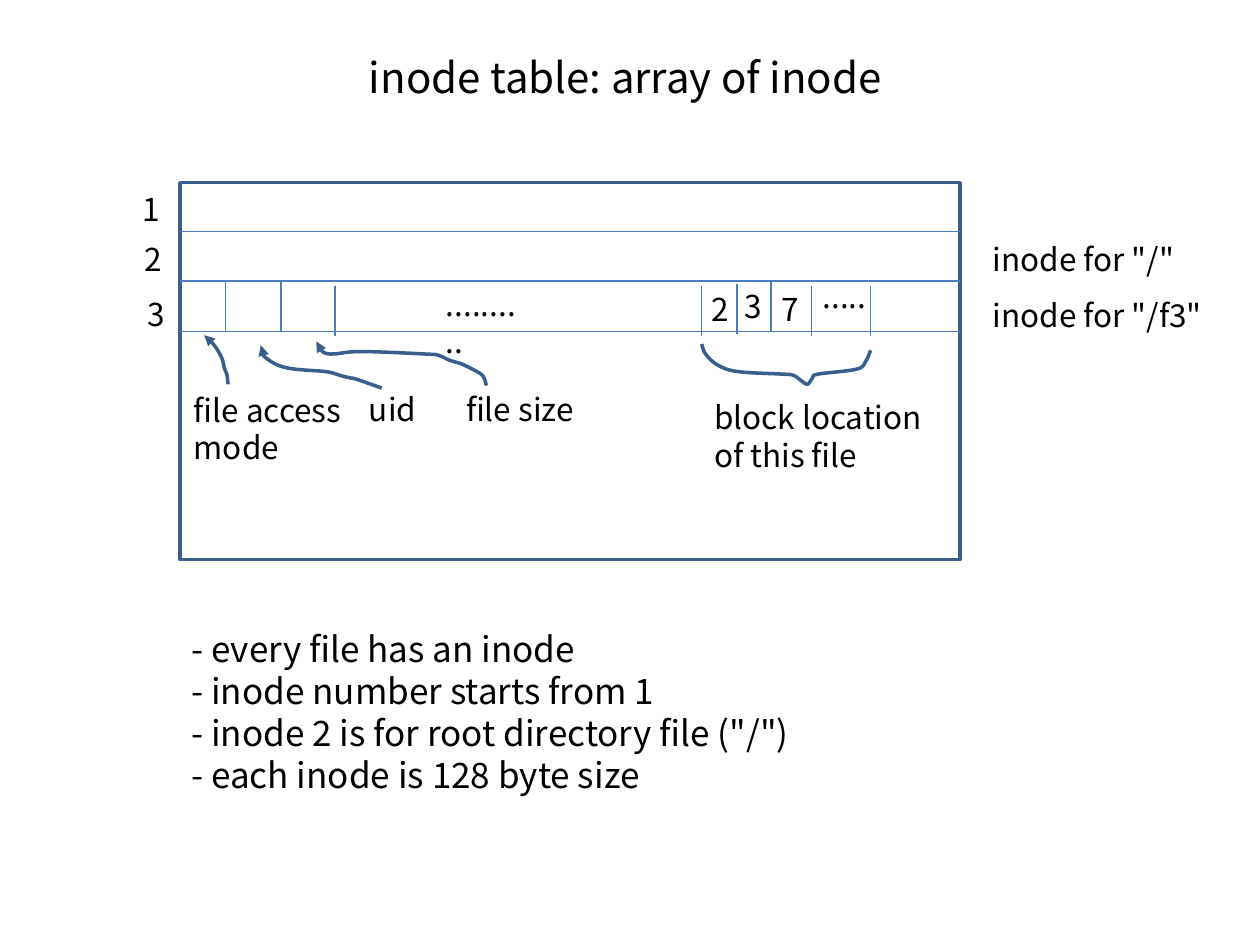
from dataclasses import dataclass

from pptx import Presentation
from pptx import util as u
from pptx.dml.color import RGBColor
from pptx.enum import shapes, text
from pptx.oxml.ns import qn
from lxml import etree

Inches, Pt = u.Inches, u.Pt


@dataclass(frozen=True)
class Theme:
    font: str = "Noto Sans CJK KR"
    ink: RGBColor = RGBColor(0x00, 0x00, 0x00)
    outline: RGBColor = RGBColor(0x3A, 0x5F, 0x8C)
    rule: RGBColor = RGBColor(0x4B, 0x7E, 0xBC)
    title: int = 24
    label: int = 18
    note: int = 20
    thick: float = 2
    thin: float = 0.75


THEME = Theme()
TABLE_LEFT, TABLE_TOP, TABLE_WIDTH, TABLE_HEIGHT = 1.43, 1.45, 6.19, 2.99
ROW_LINES = (1.84, 2.23, 2.63)
FIELD_LINES = (
    (1.79, 2.23), (2.23, 2.23), (2.66, 2.27), (5.57, 2.27),
    (5.85, 2.25), (6.12, 2.23), (6.44, 2.27), (6.91, 2.27),
)
LABELS = (
    ("1", 1.03, 1.46, 0.39, 0.4),
    ("2", 1.05, 1.86, 0.39, 0.4),
    ("3", 1.07, 2.29, 0.39, 0.4),
    ('inode for "/"', 7.78, 1.86, 1.65, 0.4),
    ('inode for "/f3"', 7.78, 2.3, 1.97, 0.4),
    ("..........", 3.44, 2.21, 0.81, 0.4),
    ("2", 5.55, 2.25, 0.48, 0.4),
    ("3", 5.81, 2.23, 0.48, 0.4),
    ("7", 6.1, 2.25, 0.48, 0.4),
    (".....", 6.43, 2.15, 0.81, 0.4),
    ("file access mode", 1.44, 3.05, 1.57, 0.71),
    ("uid", 2.83, 3.05, 0.93, 0.4),
    ("file size", 3.6, 3.05, 1.15, 0.4),
    ("block location\nof this file", 5.57, 3.11, 1.89, 0.71),
)
NOTES = """- every file has an inode
- inode number starts from 1
- inode 2 is for root directory file ("/")
- each inode is 128 byte size"""
MODE_ARROW = ((1.81, 3.05), (1.8, 2.97), (1.78, 2.92), (1.76, 2.84), (1.7, 2.74), (1.62, 2.66))
UID_ARROW = (
    (3.03, 3.08), (2.83, 3.01), (2.78, 3), (2.7, 2.98), (2.59, 2.95), (2.34, 2.93),
    (2.21, 2.9), (2.11, 2.84), (2.08, 2.79), (2.07, 2.74),
)
SIZE_ARROW = (
    (3.86, 3.06), (3.83, 2.98), (3.73, 2.92), (3.67, 2.89), (3.57, 2.86), (3.48, 2.82),
    (3.38, 2.81), (2.86, 2.79), (2.62, 2.81), (2.53, 2.76), (2.51, 2.71),
)
BLOCK_BRACE = (
    (5.57, 2.73), (5.6, 2.81), (5.7, 2.9), (5.86, 2.95), (6.22, 2.97), (6.3, 2.98),
    (6.37, 3.03), (6.41, 3.05), (6.45, 3), (6.49, 2.97), (6.8, 2.93), (6.87, 2.87), (6.91, 2.78),
)


def add_text(page, words, left, top, width, height, size, centred=False):
    box = page.shapes.add_textbox(Inches(left), Inches(top), Inches(width), Inches(height))
    frame = box.text_frame
    frame.word_wrap = True
    if centred:
        frame.vertical_anchor = text.MSO_ANCHOR.MIDDLE
    else:
        frame.auto_size = text.MSO_AUTO_SIZE.SHAPE_TO_FIT_TEXT
    for index, line in enumerate(words.split("\n")):
        para = frame.add_paragraph() if index else frame.paragraphs[0]
        para.alignment = text.PP_ALIGN.CENTER if centred else text.PP_ALIGN.LEFT
        span = para.add_run()
        span.text = line
        span.font.name = THEME.font
        span.font.size = Pt(size)
        span.font.color.rgb = THEME.ink


def style_outline(shape):
    shape.shadow.inherit = False
    shape.fill.background()
    shape.line.color.rgb = THEME.outline
    shape.line.width = Pt(THEME.thick)


def add_table_frame(page):
    frame = page.shapes.add_shape(
        shapes.MSO_SHAPE.RECTANGLE, Inches(TABLE_LEFT), Inches(TABLE_TOP),
        Inches(TABLE_WIDTH), Inches(TABLE_HEIGHT))
    style_outline(frame)


def add_rule(page, x1, y1, x2, y2):
    rule = page.shapes.add_connector(
        shapes.MSO_CONNECTOR.STRAIGHT, Inches(x1), Inches(y1), Inches(x2), Inches(y2))
    rule.line.color.rgb = THEME.rule
    rule.line.width = Pt(THEME.thin)
    etree.SubElement(rule._element.spPr, qn("a:effectLst"))


def smooth_controls(knots):
    padded = (knots[0], *knots, knots[-1])
    for before, start, end, after in zip(padded, padded[1:], padded[2:], padded[3:]):
        yield tuple(s + (e - b) / 6 for b, s, e in zip(before, start, end))
        yield tuple(e - (a - s) / 6 for s, e, a in zip(start, end, after))
        yield end


def add_curve(page, knots, arrow=False):
    points = [(Inches(x), Inches(y)) for x, y in (knots[0], *smooth_controls(knots))]
    builder = page.shapes.build_freeform(*points[0])
    builder.add_line_segments(points[1:], close=False)
    curve = builder.convert_to_shape()
    outline = curve._element.spPr.find(".//" + qn("a:path"))
    segments = outline.findall(qn("a:lnTo"))
    for first in range(0, len(segments), 3):
        bezier = etree.SubElement(outline, qn("a:cubicBezTo"))
        for segment in segments[first:first + 3]:
            bezier.append(segment[0])
            outline.remove(segment)
    style_outline(curve)
    if arrow:
        etree.SubElement(curve.line._get_or_add_ln(), qn("a:tailEnd"), type="triangle")


def main():
    deck = Presentation()
    deck.slide_width, deck.slide_height = Inches(10), Inches(7.5)
    page = deck.slides.add_slide(deck.slide_layouts[6])
    add_text(page, "inode table: array of inode ", 0.5, 0.3, 9, 0.61, THEME.title, centred=True)
    add_table_frame(page)
    for y in ROW_LINES:
        add_rule(page, TABLE_LEFT, y, TABLE_LEFT + TABLE_WIDTH, y)
    for x, y in FIELD_LINES:
        add_rule(page, x, y, x, y + 0.4)
    for words, *place in LABELS:
        add_text(page, words, *place, THEME.label)
    for arrow in (MODE_ARROW, UID_ARROW, SIZE_ARROW):
        add_curve(page, arrow, arrow=True)
    add_curve(page, BLOCK_BRACE)
    add_text(page, NOTES, 1.42, 4.93, TABLE_WIDTH, 1.45, THEME.note)
    deck.save("out.pptx")


if __name__ == "__main__":
    main()
